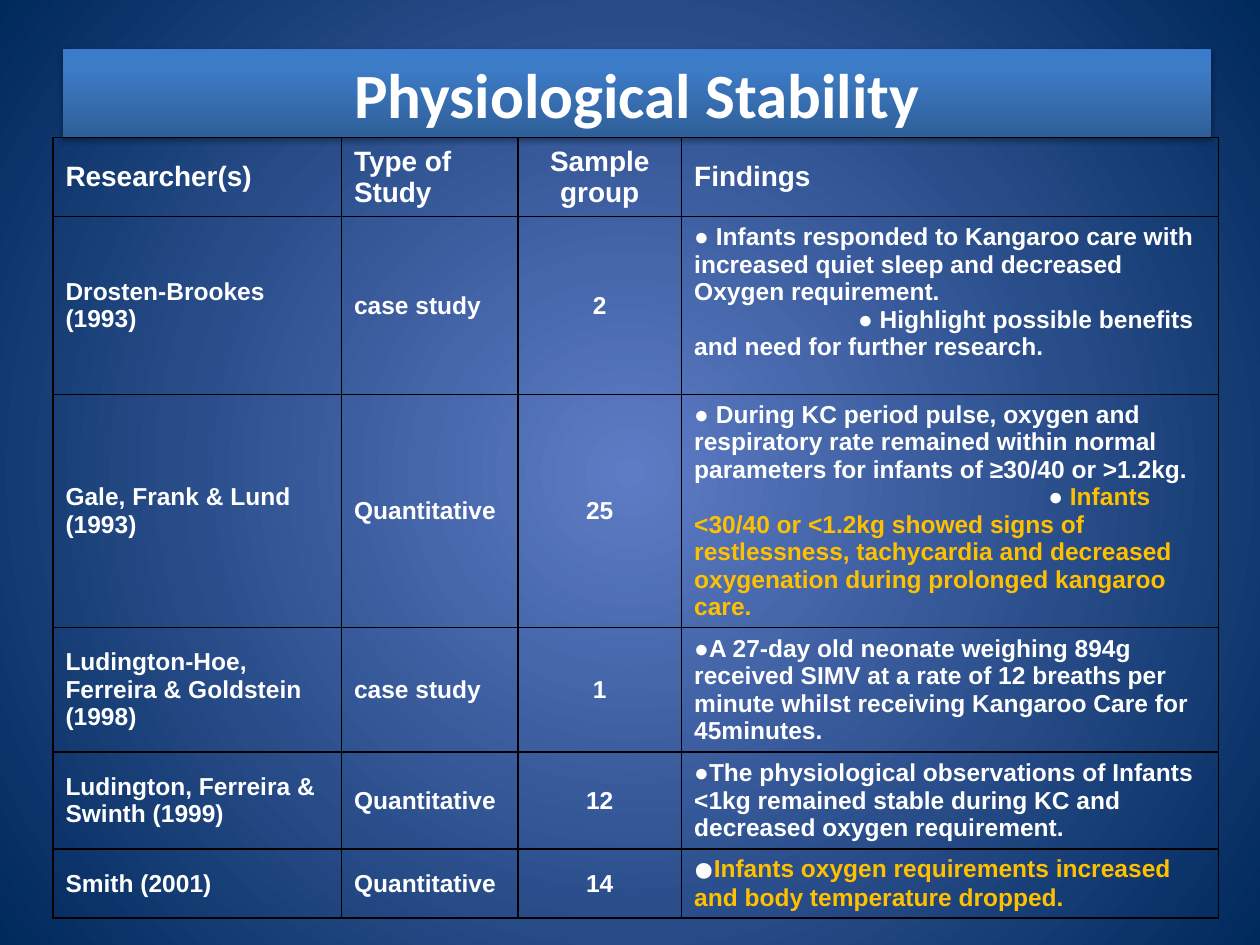
from lxml import etree
from pptx import Presentation
from pptx.dml.color import RGBColor
from pptx.enum.shapes import MSO_SHAPE
from pptx.enum.text import MSO_ANCHOR, PP_ALIGN
from pptx.oxml import parse_xml
from pptx.oxml.ns import nsdecls, qn
from pptx.util import Inches, Pt

RECT = MSO_SHAPE.RECTANGLE
MIDDLE = MSO_ANCHOR.MIDDLE
LEFT, CENTER = PP_ALIGN.LEFT, PP_ALIGN.CENTER

COLORS = {
    "white": "FFFFFF", "gold": "FFC000", "black": "000000",
    "glow": "5E7CC5", "navy": "00295C",
    "steel": "2F5F99", "blue": "3D7CC7", "sky": "3A7CCB",
}
WIDTHS = [2.29, 1.4, 1.3, 4.26]
HEIGHTS = [0.63, 1.41, 1.85, 0.99, 0.77, 0.54]
HEADS = ["Researcher(s)", "Type of Study", "Sample group", "Findings"]

# Each finding is (first-line indent, runs); a run is (text, colour, font).
STUDIES = [
    ("Drosten-Brookes (1993)", "case study", "2", [
        (0, [("● Infants responded to Kangaroo care with increased quiet sleep "
              "and decreased Oxygen requirement.", "white", "Arial")]),
        (1.3, [("● Highlight possible benefits and need for further research.",
                "white", "Arial")])]),
    ("Gale, Frank & Lund (1993)", "Quantitative", "25", [
        (0, [("● During KC period pulse, oxygen and respiratory rate remained within "
              "normal parameters for infants of ≥30/40 or >1.2kg.", "white", "Arial")]),
        (2.81, [("● ", "white", "Arial"),
                ("Infants <30/40 or <1.2kg showed signs of restlessness, tachycardia "
                 "and decreased oxygenation during prolonged kangaroo care.",
                 "gold", "Arial")])]),
    ("Ludington-Hoe, Ferreira & Goldstein (1998)", "case study", "1", [
        (0, [("●A 27-day old neonate weighing 894g received SIMV at a rate of 12 breaths "
              "per minute whilst receiving Kangaroo Care for 45minutes.",
              "white", "Arial")])]),
    ("Ludington, Ferreira & Swinth (1999)", "Quantitative", "12", [
        (0, [("●The physiological observations of Infants <1kg remained stable during KC "
              "and decreased oxygen requirement.", "white", "Arial")])]),
    ("Smith (2001)", "Quantitative", "14", [
        (0, [("●", "white", "TeX Gyre Pagella"),
             ("Infants oxygen requirements increased and body temperature dropped.",
              "gold", "Arial")])]),
]


def add_run(para, text, size, color="white", font="Arial"):
    run = para.add_run()
    run.text = text
    run.font.size = Pt(size)
    run.font.bold = True
    run.font.name = font
    run.font.color.rgb = RGBColor.from_string(COLORS[color])


def set_stops(fill, root, stops, course):
    """Give the gradient under root its stops and its course (line or circle)."""
    fill.gradient()
    grad = root.find(".//" + qn("a:gradFill"))
    for child in list(grad):
        grad.remove(child)
    marks = "".join(f'<a:gs pos="{pos * 1000}"><a:srgbClr val="{COLORS[name]}"/></a:gs>'
                    for pos, name in stops)
    grad.append(parse_xml(f'<a:gsLst {nsdecls("a")}>{marks}</a:gsLst>'))
    grad.append(course)


def paint_back(slide):
    circle = parse_xml(f'<a:path {nsdecls("a")} path="circle"><a:fillToRect '
                       'l="50000" t="50000" r="50000" b="50000"/></a:path>')
    set_stops(slide.background.fill, slide.element,
              [(0, "glow"), (100, "navy")], circle)


def add_title(slide, text):
    bar = slide.shapes.add_shape(RECT, Inches(0.5), Inches(0.39),
                                 Inches(9.11), Inches(0.7))
    upward = parse_xml(f'<a:lin {nsdecls("a")} ang="16200000" scaled="0"/>')
    set_stops(bar.fill, bar.element,
              [(0, "steel"), (80, "blue"), (100, "sky")], upward)
    bar.line.fill.background()
    bar.shadow.inherit = False
    effects = bar.element.spPr.find(qn("a:effectLst"))
    effects.append(parse_xml(
        f'<a:outerShdw {nsdecls("a")} blurRad="{Pt(3.1)}" dist="{Pt(1.8)}" '
        f'dir="5400000" rotWithShape="0"><a:srgbClr val="{COLORS["black"]}">'
        '<a:alpha val="35000"/></a:srgbClr></a:outerShdw>'))
    frame = bar.text_frame
    frame.word_wrap = True
    frame.vertical_anchor = MIDDLE
    para = frame.paragraphs[0]
    para.alignment = CENTER
    add_run(para, text, 36, font="Calibri")


def set_border(cell):
    props = cell._tc.get_or_add_tcPr()
    for spot, side in enumerate(("lnL", "lnR", "lnT", "lnB")):
        line = etree.Element(qn("a:" + side), w=str(Pt(1)))
        solid = etree.SubElement(line, qn("a:solidFill"))
        etree.SubElement(solid, qn("a:srgbClr"), val=COLORS["black"])
        props.insert(spot, line)


def fill_cell(cell, paras, size, align):
    cell.fill.background()
    set_border(cell)
    cell.vertical_anchor = MIDDLE
    frame = cell.text_frame
    for spot, (indent, runs) in enumerate(paras):
        para = frame.add_paragraph() if spot else frame.paragraphs[0]
        para.alignment = align
        if indent:
            para._p.get_or_add_pPr().set("indent", str(Inches(indent)))
        for run in runs:
            add_run(para, run[0], size, *run[1:])


def add_studies(slide):
    rows = [HEADS] + STUDIES
    table = slide.shapes.add_table(len(rows), len(WIDTHS), Inches(0.42), Inches(1.09),
                                   Inches(sum(WIDTHS)), Inches(sum(HEIGHTS))).table
    table.horz_banding = False
    for col, width in zip(table.columns, WIDTHS):
        col.width = Inches(width)
    for row, height in zip(table.rows, HEIGHTS):
        row.height = Inches(height)
    for r, row in enumerate(rows):
        for c, item in enumerate(row):
            paras = [(0, [(item,)])] if isinstance(item, str) else item
            fill_cell(table.cell(r, c), paras, 14 if r else 16,
                      CENTER if c == 2 else LEFT)
    # The first finding sits one line above the foot of its cell.
    table.cell(1, 3).margin_bottom = Inches(0.26)


def main():
    deck = Presentation()
    deck.slide_width, deck.slide_height = Inches(10), Inches(7.5)
    slide = deck.slides.add_slide(deck.slide_layouts[6])
    paint_back(slide)
    add_title(slide, "Physiological Stability")
    add_studies(slide)
    deck.save("out.pptx")


if __name__ == "__main__":
    main()
